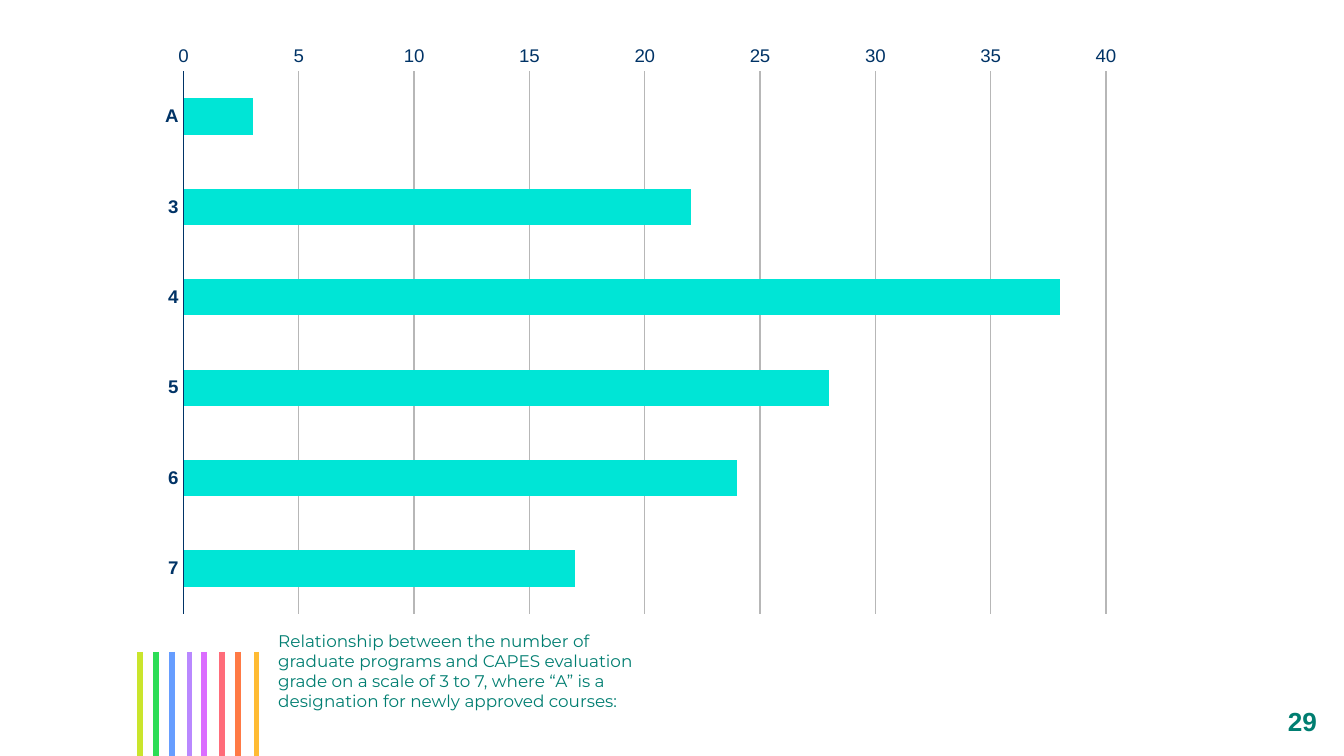
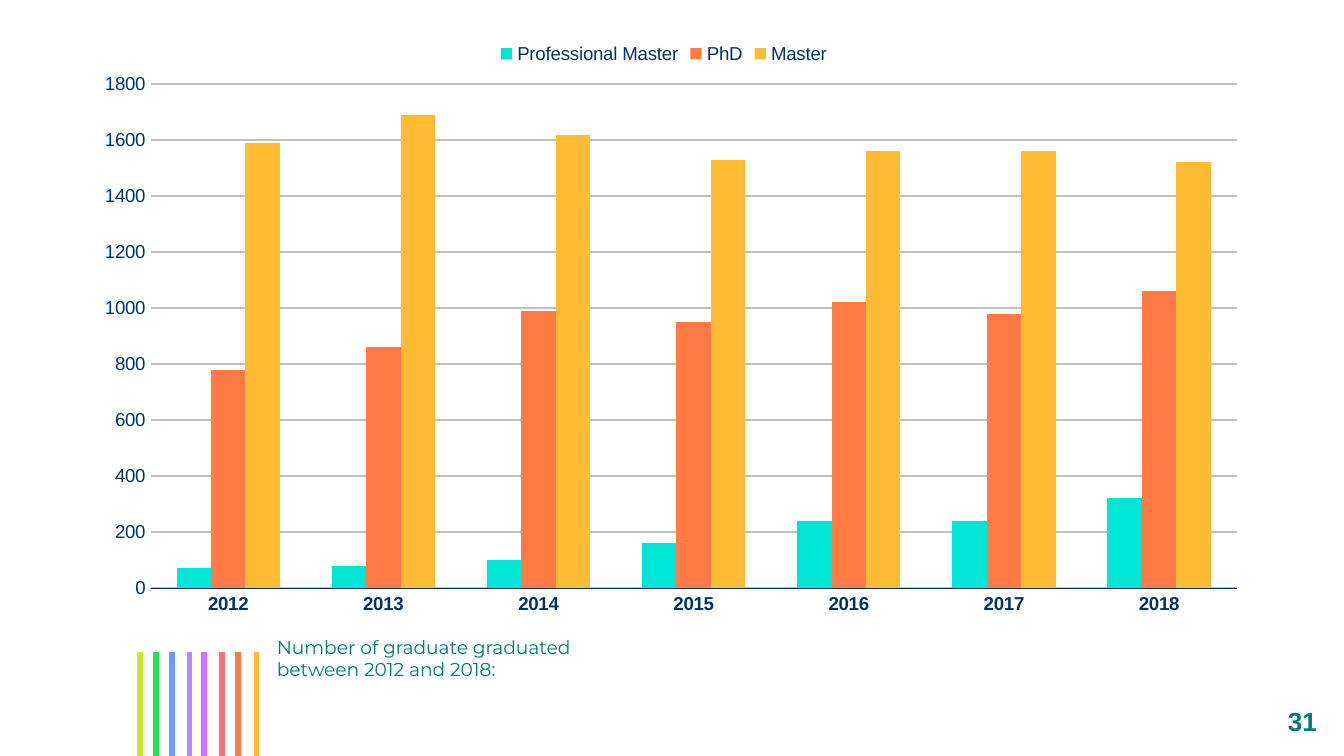
from dataclasses import dataclass
from typing import NamedTuple

from lxml import etree
from pptx import Presentation
from pptx.chart.data import CategoryChartData
from pptx.dml.color import RGBColor
from pptx.enum.chart import XL_AXIS_CROSSES, XL_CHART_TYPE, XL_LEGEND_POSITION, XL_TICK_MARK
from pptx.enum.shapes import MSO_CONNECTOR, MSO_SHAPE
from pptx.enum.text import MSO_ANCHOR, MSO_AUTO_SIZE, PP_ALIGN
from pptx.oxml import parse_xml
from pptx.oxml.ns import nsdecls, qn
from pptx.util import Emu, Pt

BAR, COLUMN = XL_CHART_TYPE.BAR_CLUSTERED, XL_CHART_TYPE.COLUMN_CLUSTERED
AXIS_MAXIMUM, NO_TICK, LEGEND_TOP = XL_AXIS_CROSSES.MAXIMUM, XL_TICK_MARK.NONE, XL_LEGEND_POSITION.TOP
STRAIGHT, RECTANGLE = MSO_CONNECTOR.STRAIGHT, MSO_SHAPE.RECTANGLE
TOP, MIDDLE = MSO_ANCHOR.TOP, MSO_ANCHOR.MIDDLE
LEFT, CENTER = PP_ALIGN.LEFT, PP_ALIGN.CENTER
NO_AUTOFIT = MSO_AUTO_SIZE.NONE

EMU_PER_PX = 4572  # 200 px to the inch
SLIDE_WIDTH, SLIDE_HEIGHT = 2000, 1125
INSET = 20


@dataclass(frozen=True)
class Theme:
    heading_font: str = "Montserrat"
    label_font: str = "Arial"
    white: str = "FFFFFF"
    green: str = "007E71"
    navy: str = "003366"
    turquoise: str = "00E5D6"
    orange: str = "FF7A45"
    amber: str = "FFBB33"
    chart_size: int = 10
    number_size: int = 14
    stripe_width: int = 3
    grid_width: float = 0.75


THEME = Theme()


class Box(NamedTuple):
    left: int
    top: int
    width: int
    height: int


class Stripe(NamedTuple):
    x: int
    color: str


class Series(NamedTuple):
    name: str
    values: tuple[int, ...]
    color: str


class PlotArea(NamedTuple):
    x: float
    y: float
    w: float
    h: float


@dataclass(frozen=True)
class ChartSlide:
    number: str
    caption: str
    caption_box: Box
    caption_size: int
    chart_type: int
    chart_box: Box
    plot_area: PlotArea
    categories: tuple[str, ...]
    series: tuple[Series, ...]
    maximum: int
    unit: int
    grid_color: str
    axis_width: float
    reverse: bool = False
    legend: bool = False


NUMBER_BOX = Box(1876, 1020, 124, 105)
STRIPE_TOP = 970
STRIPES = (
    Stripe(208, "CAE52C"), Stripe(232, "2CDD56"), Stripe(256, "669DFF"), Stripe(282, "B988FF"),
    Stripe(304, "DB6CFF"), Stripe(330, "FF6C7A"), Stripe(354, THEME.orange), Stripe(382, THEME.amber),
)

SLIDES = (
    ChartSlide(
        number="29",
        caption="Relationship between the number of graduate programs and CAPES evaluation grade "
                "on a scale of 3 to 7, where “A” is a designation for newly approved courses:",
        caption_box=Box(414, 938, 540, 132), caption_size=9,
        chart_type=BAR, chart_box=Box(214, 68, 1476, 898),
        plot_area=PlotArea(0.04, 0.02, 0.93, 0.92),
        categories=("A", "3", "4", "5", "6", "7"),
        series=(Series("Series 1", (3, 22, 38, 28, 24, 17), THEME.turquoise),),
        maximum=40, unit=5, grid_color="B7B7B7", axis_width=0.75, reverse=True,
    ),
    ChartSlide(
        number="31",
        caption="Number of graduate graduated between 2012 and 2018:",
        caption_box=Box(412, 946, 458, 152), caption_size=10,
        chart_type=COLUMN, chart_box=Box(100, 42, 1776, 926),
        plot_area=PlotArea(0.07, 0.09, 0.91, 0.81),
        categories=tuple(str(year) for year in range(2012, 2019)),
        series=(
            Series("Professional Master", (70, 80, 100, 160, 240, 240, 320), THEME.turquoise),
            Series("PhD", (780, 860, 990, 950, 1020, 980, 1060), THEME.orange),
            Series("Master", (1590, 1690, 1620, 1530, 1560, 1560, 1520), THEME.amber),
        ),
        maximum=1800, unit=200, grid_color="C0C0C0", axis_width=0.25, legend=True,
    ),
)


def px(length: int) -> Emu:
    return Emu(length * EMU_PER_PX)


def emu_box(box: Box) -> tuple[Emu, ...]:
    return tuple(px(length) for length in box)


def format_font(font, *, name: str, size: float, color: str, bold: bool = False) -> None:
    font.name, font.size, font.bold = name, Pt(size), bold
    font.color.rgb = RGBColor.from_string(color)


def write_text(shape, text: str, *, name: str, size: float, color: str, bold: bool = False,
               align=LEFT, anchor=TOP, insets: tuple[int, int, int, int] = (0, 0, 0, INSET)) -> None:
    frame = shape.text_frame
    frame.word_wrap, frame.auto_size, frame.vertical_anchor = True, NO_AUTOFIT, anchor
    frame.margin_left, frame.margin_top, frame.margin_right, frame.margin_bottom = map(px, insets)
    paragraph = frame.paragraphs[0]
    paragraph.alignment = align
    paragraph.line_spacing, paragraph.space_before = 1.0, Pt(0)
    run = paragraph.add_run()
    run.text = text
    format_font(run.font, name=name, size=size, color=color, bold=bold)


def add_stripes(slide) -> None:
    group = slide.shapes.add_group_shape()
    for stripe in STRIPES:
        line = group.shapes.add_connector(
            STRAIGHT, px(stripe.x), px(STRIPE_TOP), px(stripe.x), px(SLIDE_HEIGHT))
        line.line.color.rgb = RGBColor.from_string(stripe.color)
        line.line.width = Pt(THEME.stripe_width)
        etree.SubElement(line._element.spPr, qn("a:effectLst"))


def add_number(slide, number: str) -> None:
    shape = slide.shapes.add_shape(RECTANGLE, *emu_box(NUMBER_BOX))
    shape.shadow.inherit = False
    shape.fill.solid()
    shape.fill.fore_color.rgb = RGBColor.from_string(THEME.white)
    shape.line.fill.background()
    write_text(shape, number, name=THEME.label_font, size=THEME.number_size, color=THEME.green,
               bold=True, align=CENTER, anchor=MIDDLE, insets=(INSET,) * 4)


def add_caption(slide, content: ChartSlide) -> None:
    caption = slide.placeholders[1]
    caption.left, caption.top, caption.width, caption.height = emu_box(content.caption_box)
    write_text(caption, content.caption, name=THEME.heading_font,
               size=content.caption_size, color=THEME.green)


def set_plot_area(chart, area: PlotArea) -> None:
    edges = "".join(f'<c:{key}Mode val="edge"/>' for key in "xy")
    sizes = "".join(f'<c:{key} val="{value}"/>' for key, value in area._asdict().items())
    layout = parse_xml(f'<c:layout {nsdecls("c")}><c:manualLayout><c:layoutTarget val="inner"/>'
                       f"{edges}{sizes}</c:manualLayout></c:layout>")
    plot_area = chart._chartSpace.chart.plotArea
    for existing in plot_area.findall(qn("c:layout")):
        plot_area.remove(existing)
    plot_area.insert(0, layout)


def format_axes(chart, content: ChartSlide) -> None:
    category_axis, value_axis = chart.category_axis, chart.value_axis
    for axis in (category_axis, value_axis):
        axis.has_title = False
        axis.major_tick_mark = axis.minor_tick_mark = NO_TICK
        format_font(axis.tick_labels.font, name=THEME.label_font, size=THEME.chart_size,
                    color=THEME.navy, bold=axis is category_axis)
    category_axis.has_major_gridlines = False
    category_axis.format.line.color.rgb = RGBColor.from_string(THEME.navy)
    category_axis.format.line.width = Pt(content.axis_width)
    if content.reverse:
        category_axis.reverse_order = True
        category_axis.crosses = AXIS_MAXIMUM
    value_axis.minimum_scale, value_axis.maximum_scale = 0, content.maximum
    value_axis.major_unit = content.unit
    value_axis.format.line.fill.background()
    value_axis.has_major_gridlines = True
    grid = value_axis.major_gridlines.format.line
    grid.color.rgb = RGBColor.from_string(content.grid_color)
    grid.width = Pt(THEME.grid_width)


def add_chart(slide, content: ChartSlide) -> None:
    data = CategoryChartData()
    data.categories = content.categories
    for series in content.series:
        data.add_series(series.name, series.values)
    chart = slide.shapes.add_chart(content.chart_type, *emu_box(content.chart_box), data).chart
    label_format = {"name": THEME.label_font, "size": THEME.chart_size, "color": THEME.navy}
    format_font(chart.font, **label_format)
    chart.has_title = False
    # Bars
    plot = chart.plots[0]
    plot.vary_by_categories = False
    plot.gap_width, plot.overlap = 150, 0
    for bars, series in zip(plot.series, content.series):
        bars.format.fill.solid()
        bars.format.fill.fore_color.rgb = RGBColor.from_string(series.color)
        bars.invert_if_negative = False
    # Axes, legend and plot position
    format_axes(chart, content)
    chart.has_legend = content.legend
    if content.legend:
        chart.legend.position = LEGEND_TOP
        chart.legend.include_in_layout = False
        format_font(chart.legend.font, **label_format)
    set_plot_area(chart, content.plot_area)


def add_chart_slide(presentation, content: ChartSlide) -> None:
    slide = presentation.slides.add_slide(presentation.slide_layouts[0])
    title = slide.shapes.title._element
    title.getparent().remove(title)
    add_stripes(slide)
    add_number(slide, content.number)
    add_caption(slide, content)
    add_chart(slide, content)


def main() -> None:
    presentation = Presentation()
    presentation.slide_width, presentation.slide_height = px(SLIDE_WIDTH), px(SLIDE_HEIGHT)
    for content in SLIDES:
        add_chart_slide(presentation, content)
    presentation.save("out.pptx")


if __name__ == "__main__":
    main()
